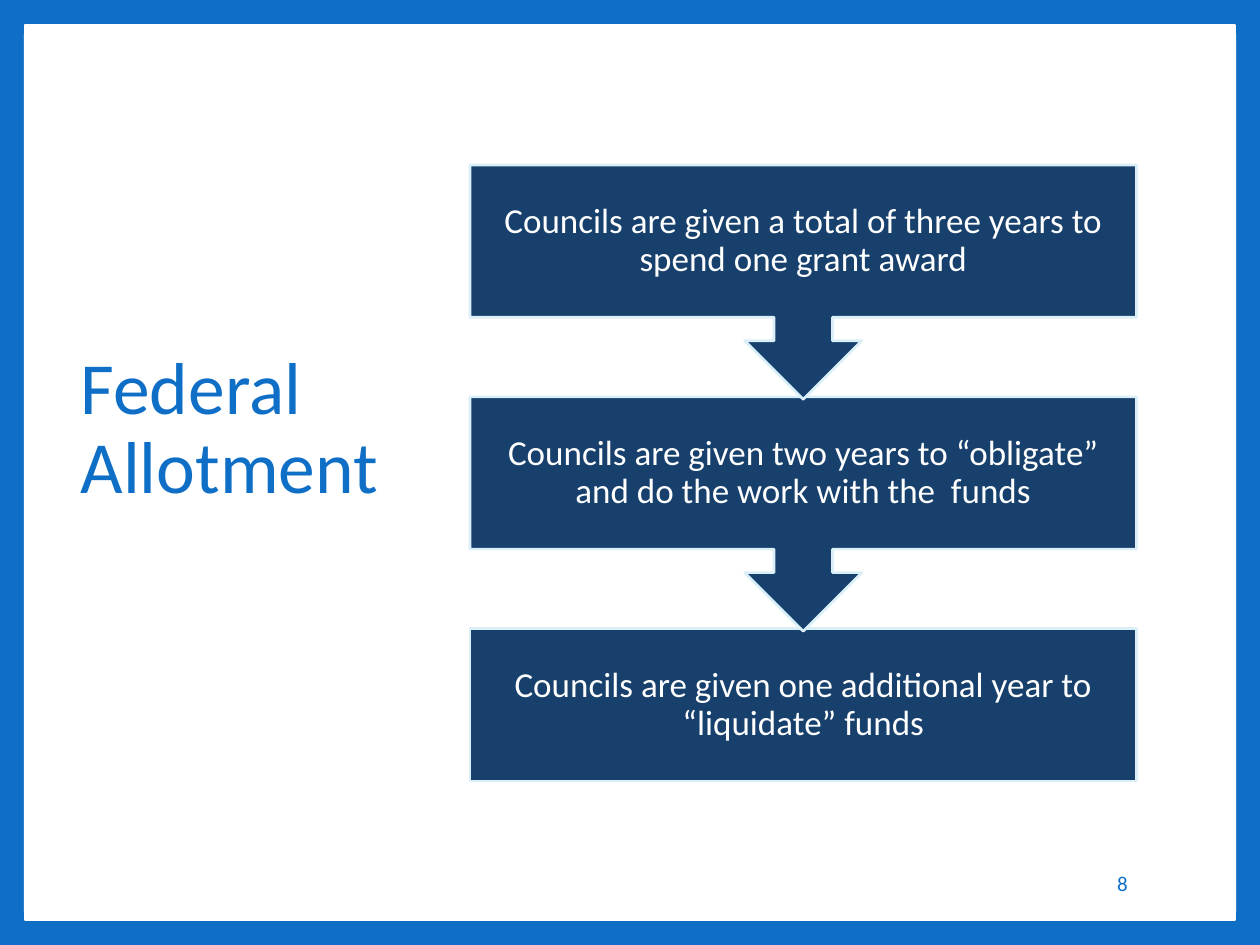
"""Builds a slide with a three-step flow about the federal allotment."""
import pptx
import pptx.dml.color
import pptx.enum.shapes
import pptx.enum.text
import pptx.util

Inches = pptx.util.Inches
Shape = pptx.enum.shapes.MSO_SHAPE
Align = pptx.enum.text.PP_ALIGN

TITLE = "Federal Allotment"
PAGE_NUMBER = "8"
STEPS = [
    "Councils are given a total of three years to spend one grant award",
    "Councils are given two years to “obligate” and do the work with the  funds",
    "Councils are given one additional year to “liquidate” funds",
]
THEME = {
    "font": "Calibri",
    "blue": "0F6FC6",
    "navy": "17406D",
    "pale": "DBEFF9",
    "white": "FFFFFF",
    "title": 42,
    "step": 20,
    "number": 12,
}
PANELS = [(0.2, 0.2, 9.6, 7.1), (0.19, 0.27, 9.62, 6.97)]
STEP_LEFT, STEP_TOP, STEP_WIDTH = 3.73, 1.31, 5.29
STEP_HEIGHT, CALLOUT_HEIGHT, STEP_PITCH = 1.21, 1.86, 1.84


def color(name):
    return pptx.dml.color.RGBColor.from_string(THEME[name])


def add_block(slide, kind, area, fill, line=None, width=1):
    block = slide.shapes.add_shape(kind, *map(Inches, area))
    block.shadow.inherit = False
    block.fill.solid()
    block.fill.fore_color.rgb = color(fill)
    if line:
        block.line.color.rgb = color(line)
        block.line.width = pptx.util.Pt(width)
    else:
        block.line.fill.background()
    return block


def write(shape, text, size, ink, align, spacing=None, margins=(0.1, 0.05, 0.1, 0.05)):
    frame = shape.text_frame
    frame.text = text
    frame.word_wrap = True
    frame.auto_size = pptx.enum.text.MSO_AUTO_SIZE.NONE
    frame.vertical_anchor = pptx.enum.text.MSO_ANCHOR.MIDDLE
    (frame.margin_left, frame.margin_top,
     frame.margin_right, frame.margin_bottom) = map(Inches, margins)
    para = frame.paragraphs[0]
    para.alignment = align
    para.line_spacing = spacing
    para.font.name = THEME["font"]
    para.font.size = pptx.util.Pt(THEME[size])
    para.font.color.rgb = color(ink)


def add_steps(slide):
    last = len(STEPS) - 1
    for index, text in reversed(list(enumerate(STEPS))):
        kind, height = Shape.DOWN_ARROW_CALLOUT, CALLOUT_HEIGHT
        if index == last:
            kind, height = Shape.RECTANGLE, STEP_HEIGHT
        area = (STEP_LEFT, STEP_TOP + index * STEP_PITCH, STEP_WIDTH, height)
        step = add_block(slide, kind, area, "navy", "pale", 1.5)
        write(step, text, "step", "white", Align.CENTER, 0.9, (0.16,) * 4)


def main():
    deck = pptx.Presentation()
    deck.slide_width, deck.slide_height = Inches(10), Inches(7.5)
    slide = deck.slides.add_slide(deck.slide_layouts[5])
    slide.background.fill.solid()
    slide.background.fill.fore_color.rgb = color("blue")

    title = slide.shapes.title
    title.left, title.top, title.width, title.height = map(Inches, (0.54, 0.67, 2.76, 6.13))
    write(title, TITLE, "title", "blue", Align.LEFT, 0.9, (0.1, 0.05, 0.1, 0.69))

    framed, plain = PANELS
    panels = [add_block(slide, Shape.RECTANGLE, framed, "white", "white"),
              add_block(slide, Shape.RECTANGLE, plain, "white")]
    for panel in panels:
        title.element.addprevious(panel.element)

    number = slide.shapes.add_textbox(*map(Inches, (7.65, 6.81, 1.4, 0.4)))
    write(number, PAGE_NUMBER, "number", "blue", Align.RIGHT)
    add_steps(slide)
    deck.save("out.pptx")


if __name__ == "__main__":
    main()
